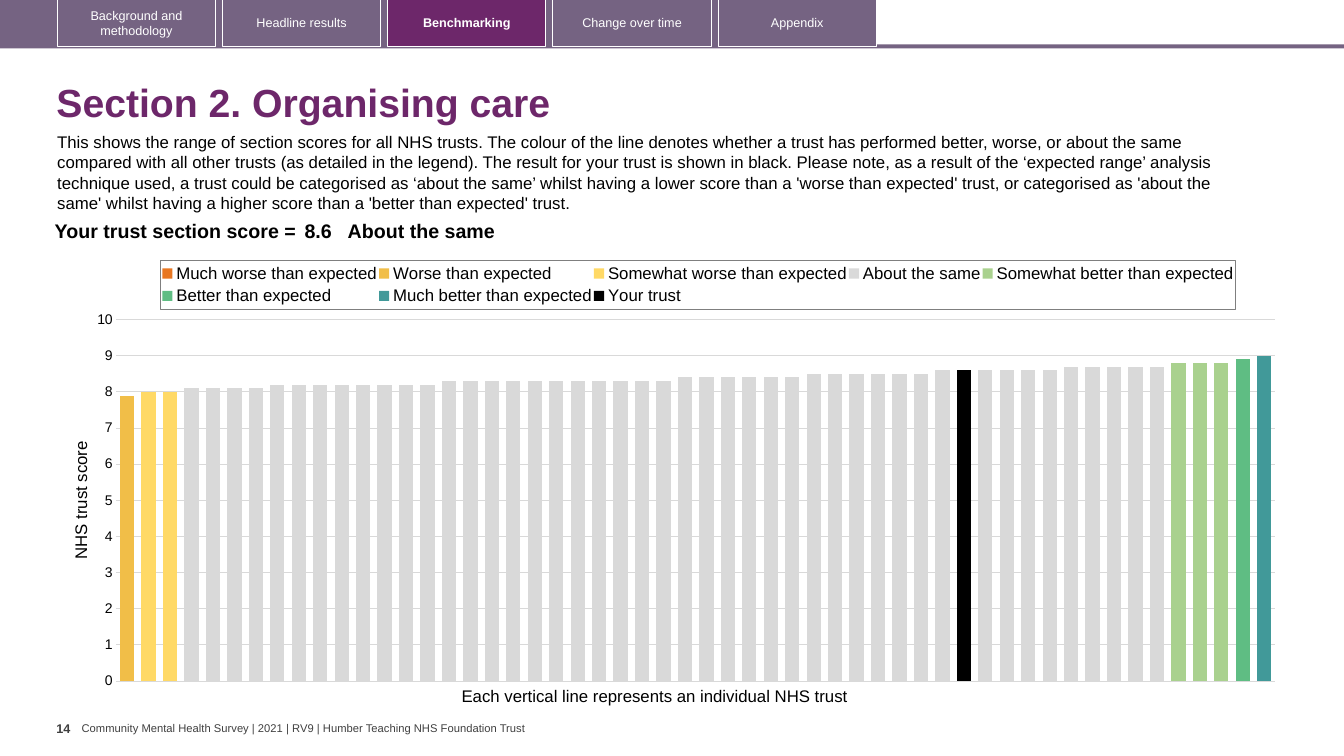
from copy import deepcopy

from pptx import Presentation
from pptx import util as u
from pptx.chart import data
from pptx.dml.color import RGBColor
from pptx.enum import chart as ch, shapes, text
from pptx.oxml import parse_xml
from pptx.oxml.ns import nsdecls, qn

Pt = u.Pt
WHITE = RGBColor(0xFF, 0xFF, 0xFF)
BLACK = RGBColor(0, 0, 0)
GREY = RGBColor(0x40, 0x40, 0x40)
GRID = RGBColor(0xD9, 0xD9, 0xD9)
PURPLE = RGBColor(0x6D, 0x27, 0x6A)
MAUVE = RGBColor(0x75, 0x63, 0x82)

TABS = ["Background and methodology", "Headline results", "Benchmarking",
        "Change over time", "Appendix"]
ACTIVE_TAB = "Benchmarking"
INTRO = (
    "This shows the range of section scores for all NHS trusts. The colour of the line "
    "denotes whether a trust has performed better, worse, or about the same compared with "
    "all other trusts (as detailed in the legend). The result for your trust is shown in "
    "black. Please note, as a result of the ‘expected range’ analysis technique used, a "
    "trust could be categorised as ‘about the same’ whilst having a lower score than a "
    "'worse than expected' trust, or categorised as 'about the same' whilst having a higher "
    "score than a 'better than expected' trust.")

# Series: name, colour, number of its first trust, scores from there on
TRUSTS = 54
SAME = ([8.1] * 4 + [8.2] * 8 + [8.3] * 11 + [8.4] * 6 + [8.5] * 6
        + [None] + [8.6] * 0)
SAME = SAME[:-1] + [8.6] * 6 + [8.7] * 5
BANDS = [
    ("Much worse than expected", RGBColor(0xE8, 0x77, 0x22), 1, []),
    ("Worse than expected", RGBColor(0xF1, 0xBE, 0x48), 1, [7.9]),
    ("Somewhat worse than expected", RGBColor(0xFF, 0xD9, 0x66), 2, [8, 8]),
    ("About the same", GRID, 4, SAME),
    ("Somewhat better than expected", RGBColor(0xA9, 0xD1, 0x8E), 50, [8.8] * 3),
    ("Better than expected", RGBColor(0x5F, 0xBD, 0x83), 53, [8.9]),
    ("Much better than expected", RGBColor(0x41, 0x99, 0x99), 54, [9]),
    ("Your trust", BLACK, 40, [8.6]),
]


def manual_layout(x, y, w, h, inner=False):
    target = '<c:layoutTarget val="inner"/>' if inner else ""
    return parse_xml(
        f'<c:layout {nsdecls("c")}><c:manualLayout>{target}'
        '<c:xMode val="edge"/><c:yMode val="edge"/>'
        f'<c:x val="{x}"/><c:y val="{y}"/><c:w val="{w}"/><c:h val="{h}"/>'
        '</c:manualLayout></c:layout>')


class SlideBuilder:
    font = "Arial"

    def __init__(self, slide):
        self.s = slide

    def style(self, font, size, color=BLACK, bold=False):
        font.name, font.size, font.bold = self.font, Pt(size), bold
        font.color.rgb = color

    def add_words(self, tf, words, size, color=BLACK, bold=False, align=text.PP_ALIGN.LEFT):
        p = tf.paragraphs[0]
        p.alignment = align
        r = p.add_run()
        r.text = words
        self.style(r.font, size, color, bold)
        return p

    def title(self, words, x, y, w, h):
        sp = self.s.shapes.title
        sp.left, sp.top, sp.width, sp.height = Pt(x), Pt(y), Pt(w), Pt(h)
        tf = sp.text_frame
        tf.auto_size = text.MSO_AUTO_SIZE.NONE
        tf.vertical_anchor = text.MSO_ANCHOR.MIDDLE
        self.add_words(tf, words, 28, PURPLE, True).line_spacing = 0.9

    def box(self, x, y, w, h, fill=None, line=None):
        sp = self.s.shapes.add_shape(shapes.MSO_SHAPE.RECTANGLE, Pt(x), Pt(y), Pt(w), Pt(h))
        sp.shadow.inherit = False
        if fill is None:
            sp.fill.background()
        else:
            sp.fill.solid()
            sp.fill.fore_color.rgb = fill
        if line is None:
            sp.line.fill.background()
        else:
            sp.line.color.rgb = line
            sp.line.width = Pt(0.75)
        return sp

    def tab(self, words, x, y, w, h, active):
        tf = self.box(x, y, w, h, PURPLE if active else None, WHITE).text_frame
        tf.word_wrap = True
        tf.vertical_anchor = text.MSO_ANCHOR.MIDDLE
        self.add_words(tf, words, 9, WHITE, active, text.PP_ALIGN.CENTER)

    def label(self, words, x, y, w, h, size, color=BLACK, bold=False, wrap=False,
              margins=(7.2, 3.6), anchor=text.MSO_ANCHOR.TOP):
        tf = self.s.shapes.add_textbox(Pt(x), Pt(y), Pt(w), Pt(h)).text_frame
        tf.word_wrap = wrap
        tf.vertical_anchor = anchor
        tf.margin_left = tf.margin_right = Pt(margins[0])
        tf.margin_top = tf.margin_bottom = Pt(margins[1])
        self.add_words(tf, words, size, color, bold)

    def score_row(self, cells, x, y, h):
        total = sum(w for _, w, _, _ in cells)
        tbl = self.s.shapes.add_table(1, len(cells), Pt(x), Pt(y), Pt(total), Pt(h)).table
        tbl.first_row = tbl.horz_banding = False
        for i, (words, w, margin, align) in enumerate(cells):
            tbl.columns[i].width = Pt(w)
            cell = tbl.cell(0, i)
            cell.fill.background()
            cell.margin_left = cell.margin_right = Pt(margin)
            cell.margin_top = cell.margin_bottom = Pt(3)
            self.add_words(cell.text_frame, words, 14, bold=True, align=align)

    def chart(self, x, y, w, h):
        cd = data.CategoryChartData(number_format="0.0")
        cd.categories = [str(n) for n in range(1, TRUSTS + 1)]
        for name, _, first, scores in BANDS:
            row = [None] * TRUSTS
            row[first - 1:first - 1 + len(scores)] = scores
            cd.add_series(name, row)
        chart = self.s.shapes.add_chart(ch.XL_CHART_TYPE.COLUMN_CLUSTERED,
                                        Pt(x), Pt(y), Pt(w), Pt(h), cd).chart
        chart.has_title = False
        chart.font.name, chart.font.size = "Calibri", Pt(10)
        chart.font.color.rgb = BLACK

        # Columns
        plot = chart.plots[0]
        plot.gap_width, plot.overlap, plot.vary_by_categories = 50, 100, False
        for ser, (_, color, _, _) in zip(plot.series, BANDS):
            ser.format.fill.solid()
            ser.format.fill.fore_color.rgb = color
            ser.invert_if_negative = False

        # Axes
        chart.category_axis.visible = False
        va = chart.value_axis
        va.minimum_scale, va.maximum_scale, va.major_unit = 0, 10, 1
        va.major_tick_mark = va.minor_tick_mark = ch.XL_TICK_MARK.NONE
        va.tick_labels.number_format = "0"
        va.tick_labels.number_format_is_linked = False
        self.style(va.tick_labels.font, 10)
        va.format.line.fill.background()
        va.major_gridlines.format.line.color.rgb = GRID
        va.major_gridlines.format.line.width = Pt(0.75)
        self.second_axis(chart)
        self.add_words(va.axis_title.text_frame, "NHS trust score", 12)

        # Legend
        chart.has_legend = True
        legend = chart.legend
        legend.position = ch.XL_LEGEND_POSITION.TOP
        legend.include_in_layout = False
        self.style(legend.font, 12)
        el = legend._element
        el.find(qn("c:legendPos")).addnext(manual_layout(0.076, 0.025, 0.878, 0.11))
        el.find(qn("c:txPr")).addprevious(parse_xml(
            f'<c:spPr {nsdecls("c", "a")}><a:ln w="9525"><a:solidFill>'
            '<a:srgbClr val="7F7F7F"/></a:solidFill></a:ln></c:spPr>'))

    def second_axis(self, chart):
        """Move the last series to a right-hand axis without labels."""
        area = chart._chartSpace.find(".//" + qn("c:plotArea"))
        for old in area.findall(qn("c:layout")):
            area.remove(old)
        area.insert(0, manual_layout(0.04, 0.158, 0.946, 0.808, inner=True))
        bars = area.find(qn("c:barChart"))
        right = deepcopy(bars)
        bars.remove(bars.findall(qn("c:ser"))[-1])
        for ser in right.findall(qn("c:ser"))[:-1]:
            right.remove(ser)
        bars.addnext(right)
        cat, val = (deepcopy(area.find(qn(t))) for t in ("c:catAx", "c:valAx"))
        val.remove(val.find(qn("c:majorGridlines")))
        for tag, value in (("axPos", "r"), ("tickLblPos", "none"), ("crosses", "max")):
            val.find(qn("c:" + tag)).set("val", value)
        ids = {cat.find(qn("c:axId")).get("val"): "5001",
               val.find(qn("c:axId")).get("val"): "5002"}
        for part in (right, cat, val):
            for ref in part.iter(qn("c:axId"), qn("c:crossAx")):
                ref.set("val", ids[ref.get("val")])
        area.find(qn("c:valAx")).addnext(val)
        val.addnext(cat)


def main():
    prs = Presentation()
    prs.slide_width, prs.slide_height = Pt(960), Pt(540)
    b = SlideBuilder(prs.slides.add_slide(prs.slide_layouts[5]))

    # Footer
    b.label("Community Mental Health Survey | 2021 | RV9 | Humber Teaching NHS Foundation Trust",
            58.3, 515.5, 322.6, 9.4, 8, GREY, margins=(0, 0), anchor=text.MSO_ANCHOR.MIDDLE)
    b.label("14", 40.3, 511.2, 18, 28.8, 9, GREY, True, margins=(0, 3.6))

    # Navigation tabs
    b.box(-2, 31.7, 962, 3, MAUVE)
    b.box(-2, 0, 628.5, 33.8, MAUVE)
    for i, name in enumerate(TABS):
        b.tab(name, 41 + 118 * i, -0.7, 113, 34, name == ACTIVE_TAB)

    # Heading and introduction
    b.title("Section 2. Organising care", 33.1, 49, 899.3, 51.8)
    b.label(INTRO, 33.8, 90.7, 873.4, 65.5, 12, wrap=True)

    # Chart and its caption
    b.label("Each vertical line represents an individual NHS trust", 322.6, 486, 296, 21.8, 12)
    b.chart(48.2, 177.8, 874.8, 319.7)

    # Section score
    left = text.PP_ALIGN.LEFT
    b.score_row([("Your trust section score =", 189.4, 3, text.PP_ALIGN.RIGHT),
                 ("8.6", 33.8, 3, left), ("About the same", 618.5, 0, left)], 25.2, 154.8, 22)
    prs.save("out.pptx")


if __name__ == "__main__":
    main()
